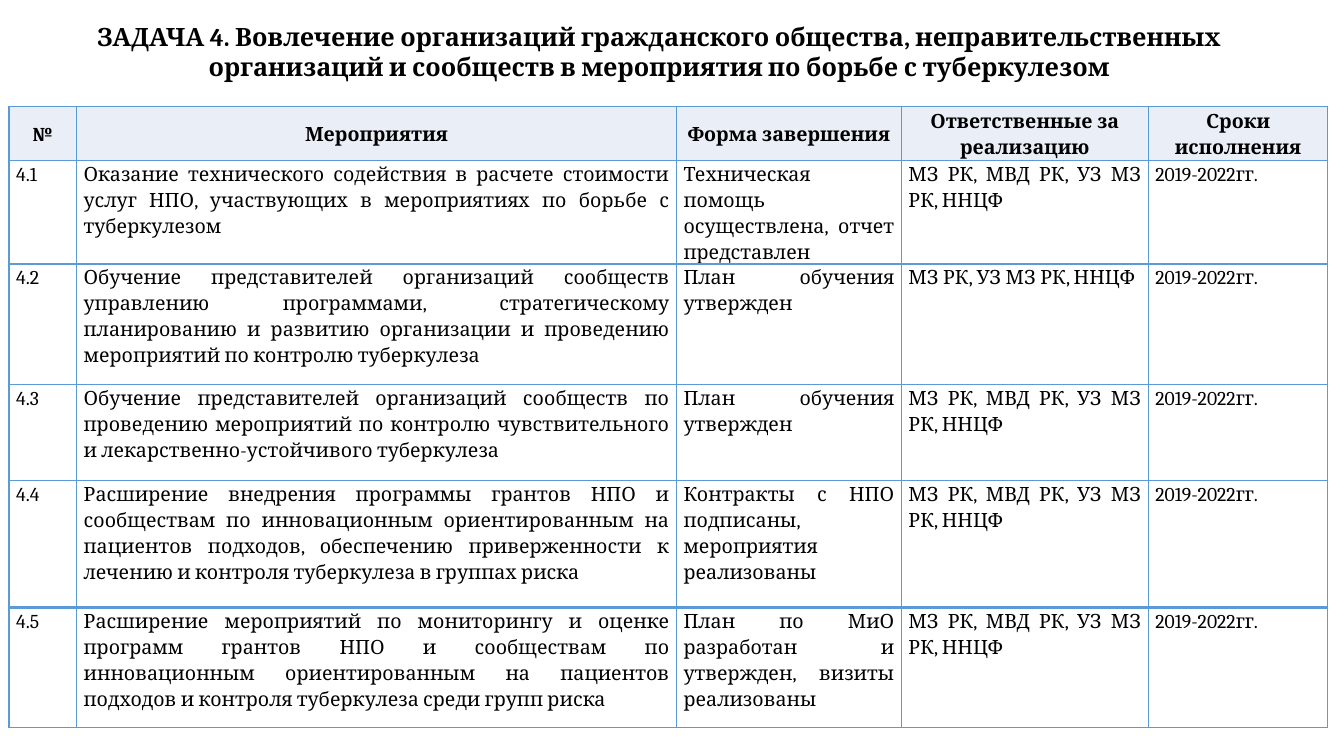
from lxml import etree
from pptx import Presentation
from pptx.dml.color import RGBColor
from pptx.enum import text as t
from pptx.oxml import ns
from pptx.util import Inches, Pt

BLACK = RGBColor(0x00, 0x00, 0x00)
PALE = RGBColor(0xEA, 0xEF, 0xF7)
BLUE = RGBColor(0x5B, 0x9B, 0xD5)
FONT = "Cambria"
MID = t.PP_ALIGN.CENTER
FULL = t.PP_ALIGN.JUSTIFY

TITLE = ("ЗАДАЧА 4. Вовлечение организаций гражданского общества, неправительственных "
         "организаций и сообществ в мероприятия по борьбе с туберкулезом")
HEADS = ["№", "Мероприятия", "Форма завершения", "Ответственные за реализацию",
         "Сроки исполнения"]
TEAM = "МЗ РК, МВД РК, УЗ МЗ РК, ННЦФ"
YEARS = "2019-2022гг."
TASKS = [
    ("Оказание технического содействия в расчете стоимости услуг НПО, участвующих "
     "в мероприятиях по борьбе с туберкулезом",
     "Техническая помощь осуществлена, отчет представлен", TEAM),
    ("Обучение представителей организаций сообществ управлению программами, "
     "стратегическому планированию и развитию организации и проведению мероприятий "
     "по контролю туберкулеза",
     "План обучения утвержден", "МЗ РК, УЗ МЗ РК, ННЦФ"),
    ("Обучение представителей организаций сообществ по проведению мероприятий "
     "по контролю чувствительного и лекарственно-устойчивого туберкулеза",
     "План обучения утвержден", TEAM),
    ("Расширение внедрения программы грантов НПО и сообществам по инновационным "
     "ориентированным на пациентов подходов, обеспечению приверженности к лечению "
     "и контроля туберкулеза в группах риска",
     "Контракты с НПО подписаны, мероприятия реализованы", TEAM),
    ("Расширение мероприятий по мониторингу и оценке программ грантов НПО "
     "и сообществам по инновационным ориентированным на пациентов подходов "
     "и контроля туберкулеза среди групп риска",
     "План по МиО разработан и утвержден, визиты реализованы", TEAM),
]
COLS = [0.67, 5.95, 2.23, 2.45, 1.78]
ROWS = [0.53, 0.76, 1.2, 0.95, 1.26, 1.19]


def write(frame, words, size=14, bold=False, align=FULL, lead=1.15, after=0):
    """Put one formatted paragraph into a text frame."""
    frame.word_wrap = True
    para = frame.paragraphs[0]
    para.text = words
    para.alignment = align
    para.line_spacing = lead
    para.space_before = Pt(0)
    para.space_after = Pt(after)
    font = para.font
    font.name, font.size, font.bold = FONT, Pt(size), bold
    font.color.rgb = BLACK


def edge(cell, top=1):
    """Draw blue lines on the four sides of a cell."""
    props = cell._tc.get_or_add_tcPr()
    for side, width in (("L", 1), ("R", 1), ("T", top), ("B", 1)):
        line = etree.SubElement(props, ns.qn(f"a:ln{side}"), w=str(Pt(width)))
        fill = etree.SubElement(line, ns.qn("a:solidFill"))
        etree.SubElement(fill, ns.qn("a:srgbClr"), val=str(BLUE))


def head(slide, left, top, width, height):
    """Place the slide title in the given box."""
    title = slide.shapes.title
    title.left, title.top, title.width, title.height = map(
        Inches, (left, top, width, height))
    frame = title.text_frame
    frame.auto_size = t.MSO_AUTO_SIZE.NONE
    frame.vertical_anchor = t.MSO_ANCHOR.TOP
    write(frame, TITLE, size=18, bold=True, align=MID, lead=1.0)


def plan(slide, left, top, width, height):
    """Place the table of tasks in the given box."""
    data = [HEADS] + [(f"4.{n}", *task, YEARS) for n, task in enumerate(TASKS, 1)]
    grid = slide.shapes.add_table(len(ROWS), len(COLS), *map(
        Inches, (left, top, width, height))).table
    grid.horz_banding = False
    for col, size in zip(grid.columns, COLS):
        col.width = Inches(size)
    for r, (row, size, line) in enumerate(zip(grid.rows, ROWS, data)):
        row.height = Inches(size)
        for cell, words in zip(row.cells, line):
            cell.margin_left = cell.margin_right = Inches(0.07)
            cell.margin_top = cell.margin_bottom = 0
            edge(cell, top=2 if r == len(TASKS) else 1)
            if r == 0:
                cell.vertical_anchor = t.MSO_ANCHOR.MIDDLE
                cell.fill.solid()
                cell.fill.fore_color.rgb = PALE
                write(cell.text_frame, words, bold=True, align=MID)
            else:
                cell.vertical_anchor = t.MSO_ANCHOR.TOP
                cell.fill.background()
                write(cell.text_frame, words, after=10)


def main():
    """Build the slide and save it."""
    deck = Presentation()
    deck.slide_width, deck.slide_height = Inches(13.33), Inches(7.5)
    slide = deck.slides.add_slide(deck.slide_layouts[5])
    head(slide, 0.34, 0.16, 12.4, 0.71)
    plan(slide, 0.09, 1.06, sum(COLS), sum(ROWS))
    deck.save("out.pptx")


if __name__ == "__main__":
    main()
